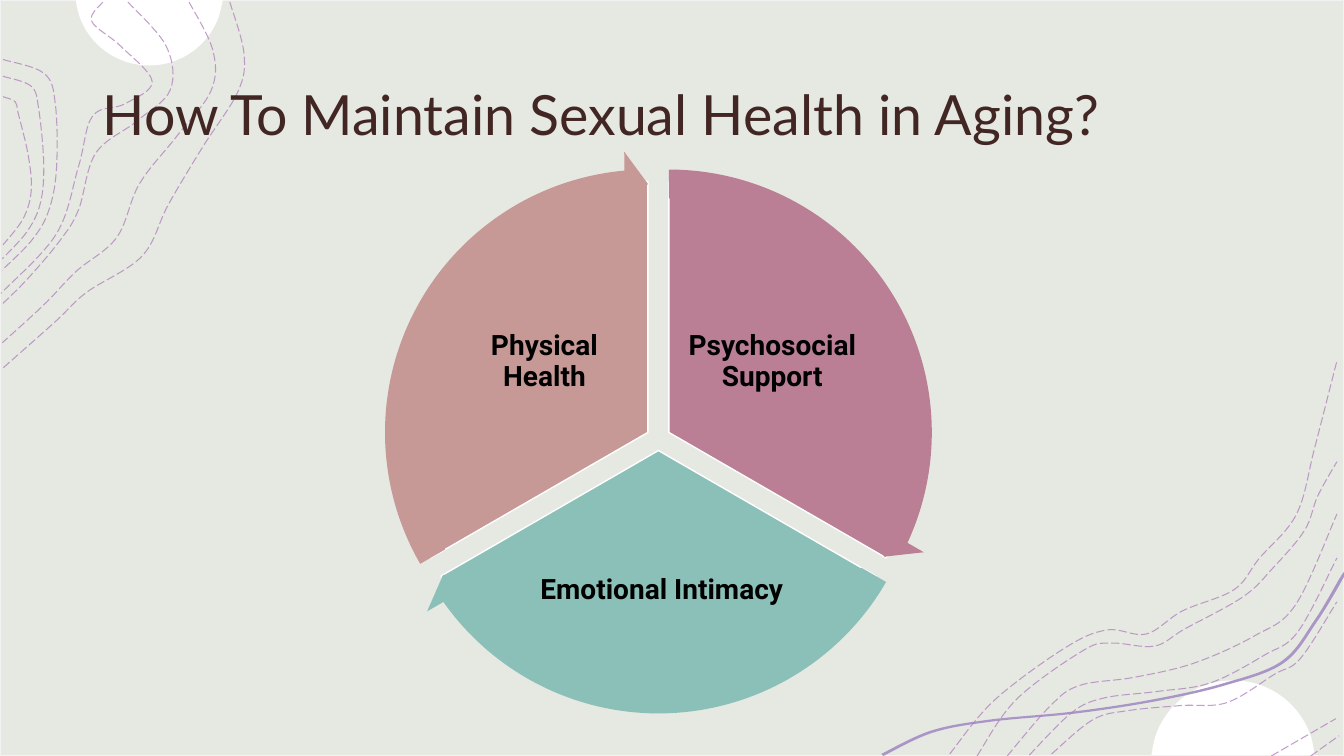
from math import acos, cos, radians, sin
from lxml.etree import SubElement
from pptx import Presentation
from pptx.dml.color import RGBColor
from pptx.enum.dml import MSO_LINE
from pptx.enum.shapes import MSO_SHAPE as SHAPE
from pptx.enum.text import MSO_ANCHOR as ANCHOR, PP_ALIGN as ALIGN
from pptx.oxml.ns import qn
from pptx.util import Inches, Pt


def paint(shape, fill=None, line=None, width=1):
    shape.shadow.inherit = False
    for part, color in ((shape.fill, fill), (shape.line.fill, line)):
        if color:
            part.solid()
            part.fore_color.rgb = RGBColor.from_string(color)
        else:
            part.background()
    if line:
        shape.line.width = Pt(width)


def add_curve(shapes, points, close=False):
    spots = [(Inches(x), Inches(y)) for x, y in points]
    builder = shapes.build_freeform(*spots[0])
    builder.add_line_segments(spots[1:], close=close)
    curve = builder.convert_to_shape()
    outline = next(curve.element.iter(qn("a:path")))
    knots = [(int(pt.get("x")), int(pt.get("y"))) for pt in outline.iter(qn("a:pt"))]
    last = len(spots) - 1
    for index, segment in enumerate(outline.findall(qn("a:lnTo"))[:last]):
        before, start = knots[max(index - 1, 0)], knots[index]
        end, after = knots[index + 1], knots[min(index + 2, last)]
        leave = [s + (e - b) / 6 for s, e, b in zip(start, end, before)]
        arrive = [e - (a - s) / 6 for s, e, a in zip(start, end, after)]
        bend = SubElement(outline, qn("a:cubicBezTo"))
        for x, y in (leave, arrive, end):
            SubElement(bend, qn("a:pt"), x=str(round(x)), y=str(round(y)))
        outline.replace(segment, bend)
    return curve


SAGE, FRAME, WHITE, VIOLET, ORCHID = "E6E8E2", "F2F2F2", "FFFFFF", "A996C6", "AF7FBA"
ROSE, TEAL, CLAY, BROWN, BLACK = "BA7F94", "8BC0B8", "C69996", "412624", "000000"

deck = Presentation()
deck.slide_width, deck.slide_height = Inches(13.33), Inches(7.5)
page = deck.slides.add_slide(deck.slide_layouts[6])

backdrop = page.shapes.add_shape(SHAPE.RECTANGLE, 0, 0, deck.slide_width, deck.slide_height)
paint(backdrop, SAGE, FRAME)

DOWN, UP = 1, -1
for middle, edge, half, depth, side in ((1.48, 0, 0.73, 0.65, DOWN), (12.23, 7.49, 0.81, 0.74, UP)):
    radius = (half ** 2 + depth ** 2) / (2 * depth)
    sweep = acos((radius - depth) / radius)
    angles = [sweep * step / 6 for step in range(-6, 7)]
    rim = [(middle + radius * sin(a), edge + side * (radius * cos(a) - radius + depth)) for a in angles]
    paint(add_curve(page.shapes, rim, True), WHITE)

ribbon_spine = [(8.75, 7.49), (9.24, 7.26), (9.82, 7.15), (10.65, 7.07), (11.44, 6.95),
                (12.14, 6.79), (12.72, 6.57), (13.05, 6.16), (13.32, 5.71)]
RIBBON_SHIFT = 0.01
upper_edge = [(x - RIBBON_SHIFT, y - RIBBON_SHIFT) for x, y in ribbon_spine]
lower_edge = [(x + RIBBON_SHIFT, y + RIBBON_SHIFT) for x, y in reversed(ribbon_spine)]
paint(add_curve(page.shapes, upper_edge + lower_edge, True), VIOLET)

sweep_outer = [(2.28, 0.02), (2.42, 0.53), (2.36, 0.91), (2.01, 1.46), (1.67, 2.03),
               (1.41, 2.54), (0.86, 2.9), (0.55, 3.19), (0.02, 3.66)]
sweep_inner = [(1.27, 0.02), (1.65, 0.46), (1.69, 0.89), (1.36, 1.2), (0.95, 1.52),
               (0.78, 2.08), (0.6, 2.38), (0.28, 2.76), (0.03, 3.01)]
sweep_hook = [(1.02, 0.02), (0.91, 0.21), (1.2, 0.46), (1.51, 0.81), (1.24, 1.03),
              (0.92, 1.15), (0.78, 1.65), (0.56, 2.32), (0.01, 2.91)]
loop_outer = [(0.03, 0.59), (0.44, 0.73), (0.55, 1.04), (0.56, 1.68), (0.48, 2.1), (0.31, 2.39), (0.02, 2.68)]
loop_inner = [(0.03, 0.96), (0.15, 1.01), (0.18, 1.12), (0.28, 1.54), (0.31, 1.89), (0.23, 2.17), (0.03, 2.43)]
ridge_upper = [(9.42, 7.48), (9.86, 6.95), (10.56, 6.43), (10.98, 6.25), (11.37, 6.29), (11.73, 6.06),
               (12.24, 5.85), (12.49, 5.54), (12.86, 5.1), (13.04, 4.44), (13.26, 3.58)]
ridge_lower = [(9.69, 7.5), (10.08, 6.94), (10.75, 6.45), (11.03, 6.38), (11.45, 6.41), (11.75, 6.24),
               (12.33, 5.92), (12.63, 5.63), (12.94, 5.26), (13.07, 4.92), (13.26, 4.58)]
slope_upper = [(9.99, 7.5), (10.42, 7), (10.71, 6.8), (11.25, 6.72), (11.84, 6.58),
               (12.44, 6.31), (12.85, 6), (13.26, 5.1)]
slope_lower = [(10.43, 7.48), (10.84, 7.14), (11.19, 7.05), (11.71, 7), (12.17, 6.97),
               (12.64, 6.69), (12.9, 6.53), (13.26, 5.97)]
corner_upper = [(12.61, 7.5), (13.25, 7.13)]
corner_lower = [(13, 7.5), (13.28, 7.3)]

top_left_waves = [(sweep_outer, sweep_inner, (0, 0.4, 1)), (sweep_hook, sweep_hook, (0,)),
                  (loop_outer, loop_inner, (0, 0.45, 1))]
bottom_right_waves = [(ridge_upper, ridge_lower, (0, 1)), (corner_upper, corner_lower, (0, 1)),
                      (slope_upper, slope_lower, (0, 0.5, 1))]
for families in (top_left_waves, bottom_right_waves):
    group = page.shapes.add_group_shape()
    for first, final, shares in families:
        for share in shares:
            blend = [(x1 + (x2 - x1) * share, y1 + (y2 - y1) * share)
                     for (x1, y1), (x2, y2) in zip(first, final)]
            wave = add_curve(group.shapes, blend)
            paint(wave, line=ORCHID, width=0.75)
            wave.line.dash_style = MSO_LINE.LONG_DASH
            tint = next(wave.element.iter(qn("a:ln"))).find(".//" + qn("a:srgbClr"))
            SubElement(tint, qn("a:alpha"), val="75000")

title = page.shapes.add_textbox(Inches(0.92), Inches(0.4), Inches(11.5), Inches(1.45))
texts = [(title, "How To Maintain Sexual Health in Aging?", "Lato", 39.6, BROWN)]

CENTER_X, CENTER_Y, PUSH = 6.53, 4.35, 0.12
PIE_SIZE, ARROW_SIZE = 4.98, 5.59
TOP, THIRD = 270, 120
DEGREE = 0.6
HEAD_ANGLE, BAND, HEAD_WIDTH = 5.46, 0.051, 0.059
sectors = [("Psychosocial Support", ROSE, (6.77, 2.85, 1.78, 1.48)),
           ("Emotional Intimacy", TEAL, (5.23, 5.21, 2.67, 1.3)),
           ("Physical Health", CLAY, (4.51, 2.85, 1.78, 1.48))]
cycle = page.shapes.add_group_shape()
arrows = []
for index, (label, color, label_area) in enumerate(sectors):
    start = (TOP + THIRD * index) % 360
    end = (start + THIRD) % 360
    bisector = radians(start + THIRD / 2)
    x, y = CENTER_X + PUSH * cos(bisector), CENTER_Y + PUSH * sin(bisector)
    pie = cycle.shapes.add_shape(SHAPE.PIE, Inches(x - PIE_SIZE / 2), Inches(y - PIE_SIZE / 2),
                                 Inches(PIE_SIZE), Inches(PIE_SIZE))
    pie.adjustments[0], pie.adjustments[1] = start * DEGREE, end * DEGREE
    paint(pie, color, WHITE)
    texts.append((cycle.shapes.add_textbox(*map(Inches, label_area)), label, "Roboto", 20, BLACK))
    arrows.append((color, x, y, start, end))

for color, x, y, start, end in arrows:
    arrow = cycle.shapes.add_shape(SHAPE.CIRCULAR_ARROW, Inches(x - ARROW_SIZE / 2), Inches(y - ARROW_SIZE / 2),
                                   Inches(ARROW_SIZE), Inches(ARROW_SIZE))
    settings = (BAND, HEAD_ANGLE * DEGREE, (end - HEAD_ANGLE) * DEGREE, start * DEGREE, HEAD_WIDTH)
    for index, value in enumerate(settings):
        arrow.adjustments[index] = value
    paint(arrow, color)

for box, words, font, size, color in texts:
    frame = box.text_frame
    frame.word_wrap = True
    frame.vertical_anchor = ANCHOR.MIDDLE
    para = frame.paragraphs[0]
    if box is not title:
        frame.margin_left = frame.margin_right = frame.margin_top = frame.margin_bottom = Inches(0.03)
        para.alignment = ALIGN.CENTER
        para.line_spacing = 0.9
    span = para.add_run()
    span.text = words
    span.font.name, span.font.size = font, Pt(size)
    span.font.bold = box is not title
    span.font.color.rgb = RGBColor.from_string(color)

deck.save("out.pptx")
